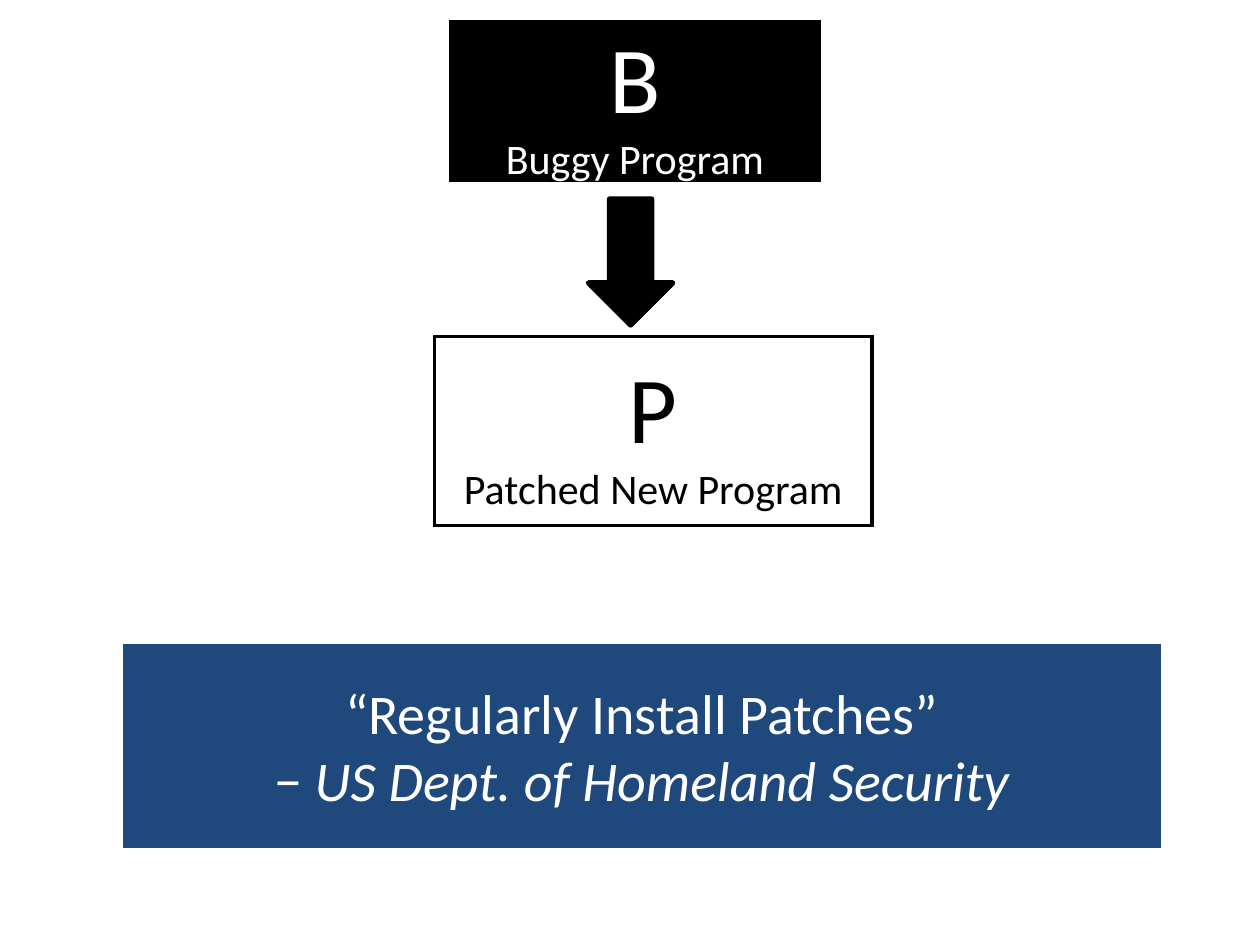
from dataclasses import dataclass

from lxml import etree
from pptx import Presentation
from pptx.dml.color import RGBColor
from pptx.enum.shapes import MSO_SHAPE
from pptx.enum.text import MSO_ANCHOR, PP_ALIGN
from pptx.oxml.ns import qn
from pptx.util import Inches, Pt

RECTANGLE = MSO_SHAPE.RECTANGLE
DOWN_ARROW = MSO_SHAPE.DOWN_ARROW
MIDDLE = MSO_ANCHOR.MIDDLE
CENTER = PP_ALIGN.CENTER
BLANK_LAYOUT = 6


@dataclass(frozen=True)
class Theme:
    font: str = "Calibri"
    black: RGBColor = RGBColor(0x00, 0x00, 0x00)
    white: RGBColor = RGBColor(0xFF, 0xFF, 0xFF)
    navy: RGBColor = RGBColor(0x1F, 0x49, 0x7D)
    letter: int = 54
    label: int = 24
    quote: int = 32


THEME = Theme()


def add_block(slide, kind, place, fill, line, line_width, join):
    shape = slide.shapes.add_shape(kind, *map(Inches, place))
    shape.shadow.inherit = False
    if fill is None:
        shape.fill.background()
    else:
        shape.fill.solid()
        shape.fill.fore_color.rgb = fill
    shape.line.color.rgb = line
    shape.line.width = Pt(line_width)
    outline = shape.line._get_or_add_ln()
    etree.SubElement(outline, qn(f"a:{join}"))
    return shape


def add_run(paragraph, text, size, color, italic=False):
    run = paragraph.add_run()
    run.text = text
    formats = {"name": THEME.font, "size": Pt(size), "italic": italic}
    for name, value in formats.items():
        setattr(run.font, name, value)
    run.font.color.rgb = color


def start_text(shape, wrap=True):
    frame = shape.text_frame
    frame.word_wrap = wrap
    frame.vertical_anchor = MIDDLE
    paragraph = frame.paragraphs[0]
    paragraph.alignment = CENTER
    return paragraph


def add_program(slide, place, letter, label, fill, color):
    box = add_block(slide, RECTANGLE, place, fill, THEME.black, 2, "miter")
    paragraph = start_text(box)
    add_run(paragraph, letter, THEME.letter, color)
    paragraph.add_line_break()
    add_run(paragraph, label, THEME.label, color)


def add_quote(slide, place, quote, source):
    banner = add_block(slide, RECTANGLE, place, THEME.navy, THEME.navy, 3, "miter")
    paragraph = start_text(banner, wrap=False)
    add_run(paragraph, quote, THEME.quote, THEME.white)
    paragraph.add_line_break()
    add_run(paragraph, "−", THEME.quote, THEME.white)
    add_run(paragraph, f" {source}", THEME.quote, THEME.white, italic=True)


def main():
    presentation = Presentation()
    presentation.slide_width = Inches(10)
    presentation.slide_height = Inches(7.5)
    slide = presentation.slides.add_slide(presentation.slide_layouts[BLANK_LAYOUT])

    add_quote(slide, (1, 5.13, 8.19, 1.58),
              "“Regularly Install Patches”", "US Dept. of Homeland Security")
    add_program(slide, (3.58, 0.17, 2.92, 1.26), "B", "Buggy Program",
                THEME.black, THEME.white)
    add_program(slide, (3.45, 2.67, 3.47, 1.5), "P", "Patched New Program",
                None, THEME.black)
    add_block(slide, DOWN_ARROW, (4.67, 1.58, 0.67, 1),
              THEME.black, THEME.black, 3, "round")

    presentation.save("out.pptx")


if __name__ == "__main__":
    main()
